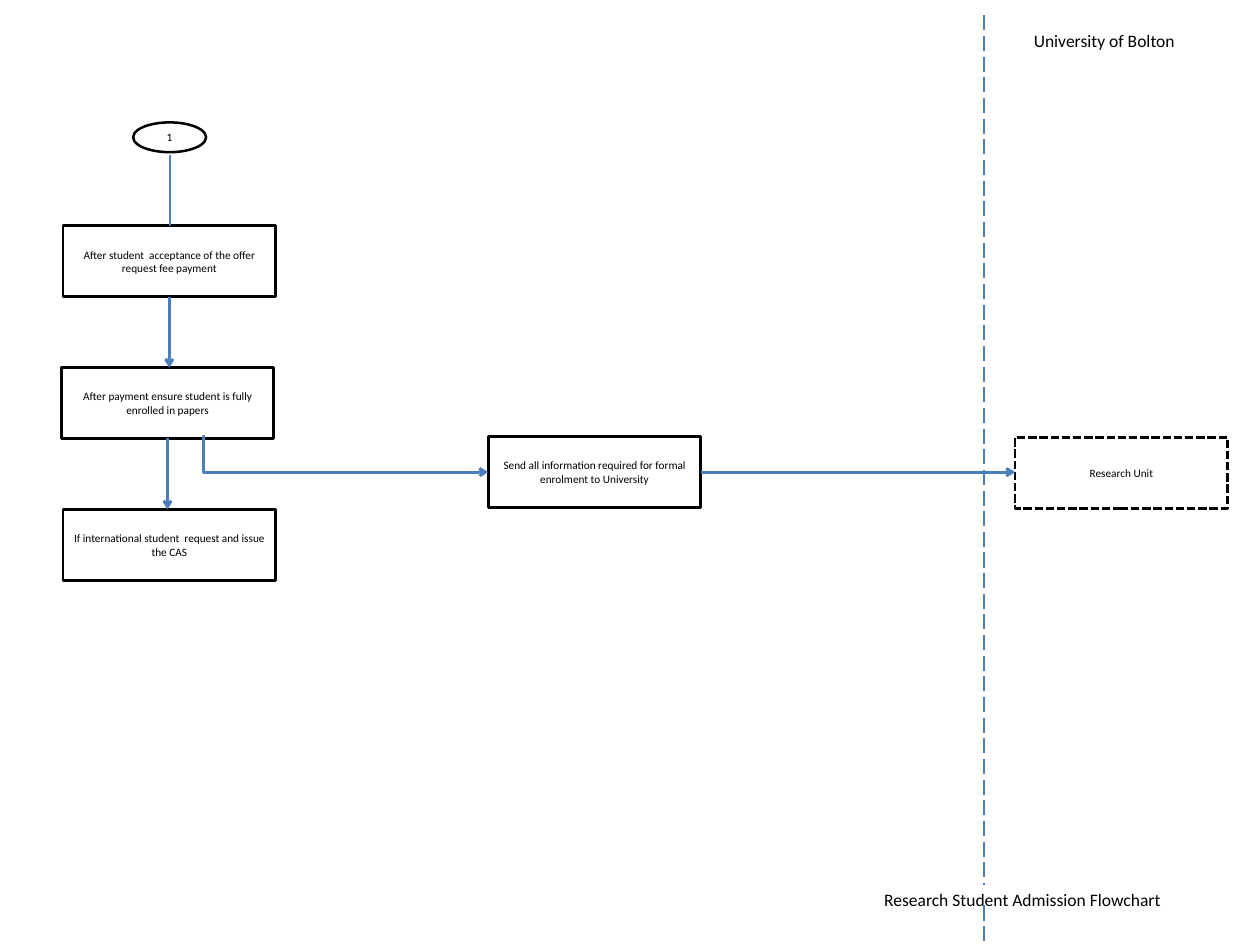
from typing import NamedTuple

from lxml.etree import SubElement
from pptx import Presentation
from pptx.dml.color import RGBColor
from pptx.enum.dml import MSO_LINE
from pptx.enum.shapes import MSO_CONNECTOR, MSO_SHAPE
from pptx.enum.text import MSO_ANCHOR, MSO_AUTO_SIZE, PP_ALIGN
from pptx.oxml.ns import qn
from pptx.util import Inches, Pt

COLORS = {"ink": "000000", "paper": "FFFFFF", "flow": "4B7EBC"}
FONT = "Calibri"
CELL = 1 / 2.54  # grid pitch in inches
LEFT, TOP = 0.7, 2.51  # grid origin: corner of the first step
WIDE, HIGH = 6, 2  # cells in a step


class Node(NamedTuple):
    text: str
    col: float
    row: float
    wide: float = WIDE
    high: float = HIGH
    shape: MSO_SHAPE = MSO_SHAPE.RECTANGLE
    weight: float = 2.25
    dash: MSO_LINE | None = None


class Link(NamedTuple):
    start: tuple[float, float]
    end: tuple[float, float]
    arrow: bool = True
    kind: MSO_CONNECTOR = MSO_CONNECTOR.STRAIGHT
    weight: float = 2.25
    dash: MSO_LINE | None = None


class Label(NamedTuple):
    text: str
    col: float
    row: float
    wide: float
    high: float = 0.86


PAY = Node("After student  acceptance of the offer request fee payment", 0, 0)
ENROL = Node("After payment ensure student is fully enrolled in papers", -0.05, 4)
ISSUE = Node("If international student  request and issue the CAS", 0, 8)
SEND = Node("Send all information required for formal enrolment to University", 12, 5.95)
UNIT = Node("Research Unit", 26.87, 5.97, dash=MSO_LINE.SQUARE_DOT)
ENTRY = Node("1", 1.98, -2.92, 2.06, 0.84, MSO_SHAPE.OVAL, 2)
NODES = [PAY, ENROL, ISSUE, SEND, ENTRY, UNIT]

LANE = 26  # column of the dashed divider
MID = SEND.row + HIGH / 2
LINKS = [
    Link((3.02, -2), (3.02, 0), arrow=False),
    Link((3, 2), (3, 4)),
    Link((2.95, 6), (2.95, 8)),
    Link((4, SEND.row), (SEND.col, MID), kind=MSO_CONNECTOR.ELBOW),
    Link((SEND.col + WIDE, MID), (UNIT.col, MID)),
    *(
        Link((LANE, first), (LANE, last), False, weight=1.5, dash=MSO_LINE.LONG_DASH)
        for first, last in [(-5.94, 18.59), (19.18, 20.29)]
    ),
]

TITLE = Label("Research Student Admission Flowchart", 22.89, 18.59, 8.38)
OWNER = Label("University of Bolton", 27.13, -5.66, 4.52)


def color(name: str) -> RGBColor:
    return RGBColor.from_string(COLORS[name])


def at(col: float, row: float) -> tuple[int, int]:
    return Inches(LEFT + col * CELL), Inches(TOP + row * CELL)


def area(item: Node | Label) -> tuple[int, int, int, int]:
    return *at(item.col, item.row), Inches(item.wide * CELL), Inches(item.high * CELL)


def write(shape, text: str, size: float, anchor: MSO_ANCHOR, wrap: bool) -> None:
    frame = shape.text_frame
    frame.text = text
    frame.word_wrap = wrap
    frame.vertical_anchor = anchor
    para = frame.paragraphs[0]
    para.alignment = PP_ALIGN.CENTER
    font = para.runs[0].font
    font.name, font.size = FONT, Pt(size)
    font.color.rgb = color("ink")


def stroke(line, name: str, weight: float, dash: MSO_LINE | None) -> None:
    line.color.rgb = color(name)
    line.width = Pt(weight)
    if dash:
        line.dash_style = dash


def add_node(slide, node: Node) -> None:
    shape = slide.shapes.add_shape(node.shape, *area(node))
    shape.shadow.inherit = False
    shape.fill.solid()
    shape.fill.fore_color.rgb = color("paper")
    stroke(shape.line, "ink", node.weight, node.dash)
    write(shape, node.text, 9, MSO_ANCHOR.MIDDLE, True)


def add_link(slide, link: Link) -> None:
    wire = slide.shapes.add_connector(link.kind, *at(*link.start), *at(*link.end))
    stroke(wire.line, "flow", link.weight, link.dash)
    props = wire._element.spPr
    if link.arrow:
        SubElement(props.find(qn("a:ln")), qn("a:tailEnd"), type="arrow")
    SubElement(props, qn("a:effectLst"))
    if link.kind == MSO_CONNECTOR.ELBOW:
        # Turn right at the start, so the wire drops before it runs across.
        guides = props.find(qn("a:prstGeom")).get_or_add_avLst()
        SubElement(guides, qn("a:gd"), name="adj1", fmla="val -500")


def set_label(shape, label: Label) -> None:
    shape.left, shape.top, shape.width, shape.height = area(label)
    write(shape, label.text, 14, MSO_ANCHOR.TOP, False)
    shape.text_frame.auto_size = MSO_AUTO_SIZE.SHAPE_TO_FIT_TEXT


def main() -> None:
    deck = Presentation()
    deck.slide_width, deck.slide_height = Inches(14), Inches(10.5)
    slide = deck.slides.add_slide(deck.slide_layouts[5])
    set_label(slide.shapes.title, TITLE)
    for node in NODES:
        add_node(slide, node)
    for link in LINKS:
        add_link(slide, link)
    set_label(slide.shapes.add_textbox(*area(OWNER)), OWNER)
    deck.save("out.pptx")


if __name__ == "__main__":
    main()
